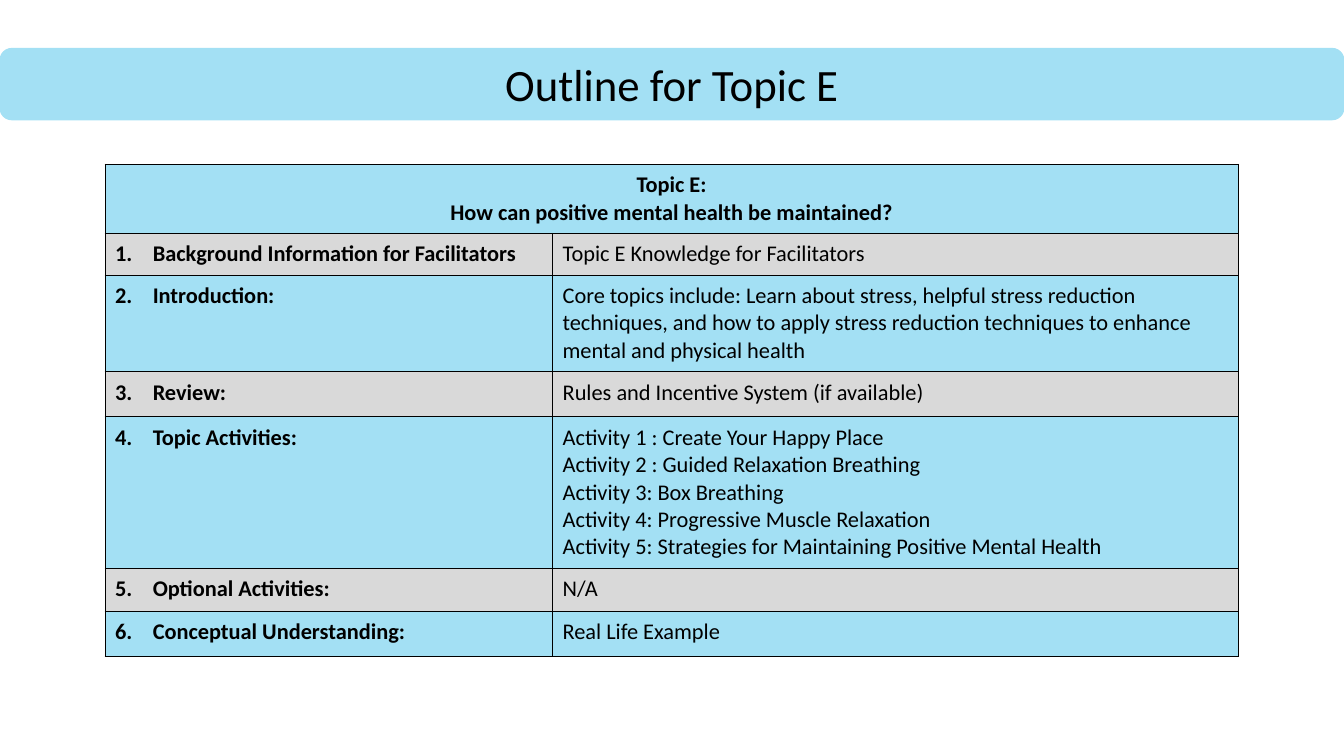
from typing import NamedTuple

from pptx import Presentation
from pptx.dml.color import RGBColor
from pptx.enum.shapes import MSO_SHAPE
from pptx.enum.text import MSO_ANCHOR, PP_ALIGN
from pptx.oxml import parse_xml
from pptx.oxml.ns import nsdecls
from pptx.util import Cm, Pt

FONT = "Calibri"
BLUE, GREY, BLACK = "A3E0F4", "D9D9D9", "000000"
PAGE_WIDTH, PAGE_HEIGHT = 33.87, 19.05
COLUMN_WIDTHS = (11.28, 17.27)
HEADING = "Topic E:\nHow can positive mental health be maintained?"
HEADING_HEIGHT = 1.68
NUMBER_INDENT = 0.95


class OutlineItem(NamedTuple):
    label: str
    content: str
    height: float


ITEMS = [
    OutlineItem("Background Information for Facilitators",
                "Topic E Knowledge for Facilitators", 1.02),
    OutlineItem("Introduction:",
                "Core topics include: Learn about stress, helpful stress reduction "
                "techniques, and how to apply stress reduction techniques to enhance "
                "mental and physical health", 2.11),
    OutlineItem("Review:", "Rules and Incentive System (if available)", 1.14),
    OutlineItem("Topic Activities:",
                "Activity 1 : Create Your Happy Place\n"
                "Activity 2 : Guided Relaxation Breathing\n"
                "Activity 3: Box Breathing\n"
                "Activity 4: Progressive Muscle Relaxation\n"
                "Activity 5: Strategies for Maintaining Positive Mental Health", 2.69),
    OutlineItem("Optional Activities:", "N/A", 1.09),
    OutlineItem("Conceptual Understanding:", "Real Life Example", 1.14),
]


def color(value: str) -> RGBColor:
    return RGBColor.from_string(value)


def write_text(frame, text: str, size: int, bold: bool = False,
               align: PP_ALIGN = PP_ALIGN.LEFT) -> None:
    frame.text = text
    for para in frame.paragraphs:
        para.alignment = align
        for span in para.runs:
            span.font.name = FONT
            span.font.size = Pt(size)
            span.font.bold = bold
            span.font.color.rgb = color(BLACK)


def number_paragraph(para, number: int) -> None:
    properties = para._p.get_or_add_pPr()
    properties.set("marL", str(Cm(NUMBER_INDENT)))
    properties.set("indent", str(-Cm(NUMBER_INDENT)))
    properties.append(parse_xml(
        f'<a:buClr {nsdecls("a")}><a:srgbClr val="{BLACK}"/></a:buClr>'))
    properties.append(parse_xml(
        f'<a:buAutoNum {nsdecls("a")} type="arabicPeriod" startAt="{number}"/>'))


def style_cell(cell, fill: str, side_margin: float = 0.25) -> None:
    cell.fill.solid()
    cell.fill.fore_color.rgb = color(fill)
    cell.margin_left = cell.margin_right = Cm(side_margin)
    cell.margin_top = cell.margin_bottom = Cm(0.18)
    properties = cell._tc.get_or_add_tcPr()
    for position, side in enumerate("LRTB"):
        properties.insert(position, parse_xml(
            f'<a:ln{side} {nsdecls("a")} w="{Pt(0.75)}"><a:solidFill>'
            f'<a:srgbClr val="{BLACK}"/></a:solidFill></a:ln{side}>'))


def add_title(page, text: str) -> None:
    banner = page.shapes.add_shape(MSO_SHAPE.ROUNDED_RECTANGLE,
                                   Cm(0), Cm(1.22), Cm(PAGE_WIDTH), Cm(1.8))
    banner.shadow.inherit = False
    banner.fill.solid()
    banner.fill.fore_color.rgb = color(BLUE)
    banner.line.color.rgb = color(BLUE)
    banner.line.width = Pt(0.75)
    frame = banner.text_frame
    frame.margin_left = frame.margin_right = Cm(0.18)
    frame.margin_top = frame.margin_bottom = Cm(0.18)
    frame.vertical_anchor = MSO_ANCHOR.MIDDLE
    write_text(frame, text, 32, align=PP_ALIGN.CENTER)


def add_outline(page, items: list[OutlineItem]) -> None:
    heights = [HEADING_HEIGHT] + [item.height for item in items]
    table = page.shapes.add_table(
        len(heights), len(COLUMN_WIDTHS), Cm(2.65), Cm(4.14),
        Cm(sum(COLUMN_WIDTHS)), Cm(sum(heights))).table
    table.first_row = table.horz_banding = False
    for column, width in zip(table.columns, COLUMN_WIDTHS):
        column.width = Cm(width)
    for row, height in zip(table.rows, heights):
        row.height = Cm(height)

    # Heading across both columns
    heading = table.cell(0, 0)
    heading.merge(table.cell(0, 1))
    for cell in table.rows[0].cells:
        style_cell(cell, BLUE, 0.33)
    write_text(heading.text_frame, HEADING, 16, bold=True, align=PP_ALIGN.CENTER)

    # Numbered items in alternating colours
    for number, item in enumerate(items, start=1):
        label, content = table.rows[number].cells
        for cell in (label, content):
            style_cell(cell, GREY if number % 2 else BLUE)
        write_text(label.text_frame, item.label, 16, bold=True)
        number_paragraph(label.text_frame.paragraphs[0], number)
        write_text(content.text_frame, item.content, 16)


def main() -> None:
    deck = Presentation()
    deck.slide_width, deck.slide_height = Cm(PAGE_WIDTH), Cm(PAGE_HEIGHT)
    page = deck.slides.add_slide(deck.slide_layouts[6])
    add_title(page, "Outline for Topic E")
    add_outline(page, ITEMS)
    deck.save("out.pptx")


if __name__ == "__main__":
    main()
